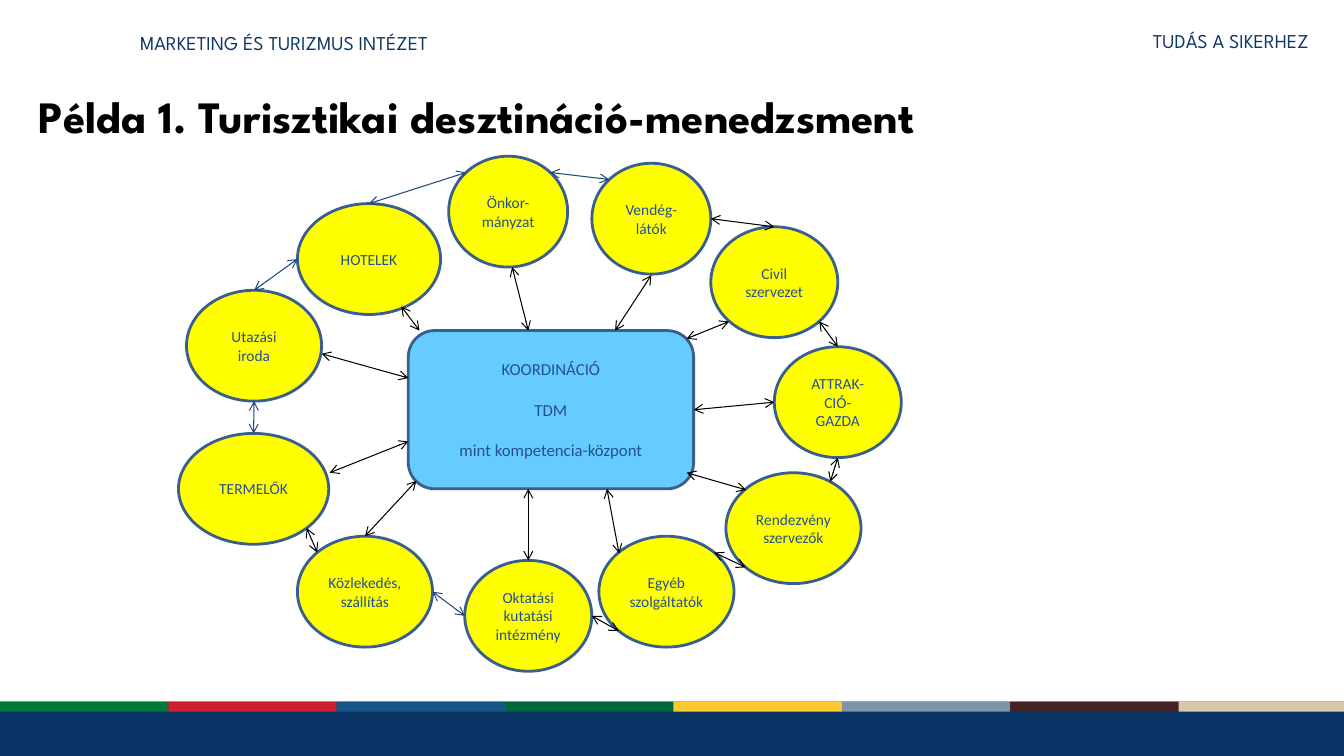
"""Builds a slide with the partners around a tourism destination hub."""
import math

import lxml.etree
import pptx
import pptx.dml.color
import pptx.enum.shapes
import pptx.enum.text
import pptx.oxml.ns
import pptx.util
from pptx.util import Inches

SHAPE = pptx.enum.shapes.MSO_SHAPE
ALIGN = pptx.enum.text.PP_ALIGN
MIDDLE = pptx.enum.text.MSO_ANCHOR.MIDDLE
HEAD = "League Spartan"
BODY = "Calibri"
NAVY, EDGE, INK = "0F3764", "3A5F8C", "23518B"
BLACK, BLUE = "000000", "1F497D"
TALL = 1.1
HUB = (4.05, 3.28, 2.83, 1.57)
STRIPES = ["007934", "CD202C", "165788", "00693C",
           "FDC82F", "7D93AA", "452325", "D9C7AA"]

# text, left, top, width, angle in, angle out, link colour, spoke start, spoke end
NODES = [
    ("Utazási iroda", 1.85, 2.88, 1.34, 270, 90, BLUE, (3.19, 3.51), (4.05, 3.75)),
    ("HOTELEK", 2.95, 2.02, 1.42, 180, 90, BLUE, (3.98, 3.04), (4.16, 3.28)),
    ("Önkor-mányzat", 4.45, 1.55, 1.18, 135, 45, BLUE, (5.08, 2.65), (5.24, 3.28)),
    ("Vendég-látók", 5.87, 1.62, 1.18, 135, 0, BLACK, (6.46, 2.73), (6.1, 3.28)),
    ("Civil szervezet", 7.05, 2.25, 1.26, 90, 315, BLACK, (7.23, 3.19), (6.81, 3.36)),
    ("ATTRAK-CIÓ-GAZDA", 7.68, 3.44, 1.26, 90, 270, BLACK, (7.68, 3.99), None),
    ("Rendezvény\nszervezők", 7.2, 4.69, 1.34, 57, 225, BLACK, (7.4, 4.86), (6.81, 4.69)),
    ("Egyéb szolgáltatók", 5.94, 5.32, 1.34, 45, 225, BLACK, (6.14, 5.49), (6.02, 4.85)),
    ("Oktatási\nkutatási intézmény", 4.61, 5.56, 1.26, 0, 180, BLUE, (5.24, 5.56), (5.24, 4.85)),
    ("Közlekedés, szállítás", 2.95, 5.32, 1.34, 0, 135, BLACK, (3.62, 5.32), (4.13, 4.77)),
    ("TERMELŐK", 1.77, 4.3, 1.49, 315, 90, BLUE, (3.27, 4.69), (4.05, 4.38)),
]


def color(code):
    """Turn a hex string into a colour."""
    return pptx.dml.color.RGBColor.from_string(code)


def write(frame, text, size, face, ink, align, bold=False, gap=0):
    """Fill a text frame, one paragraph a line."""
    frame.word_wrap = True
    frame.text = text
    for i, para in enumerate(frame.paragraphs):
        para.alignment = align
        para.font.size = pptx.util.Pt(size)
        para.font.name = face
        para.font.bold = bold
        para.font.color.rgb = color(ink)
        if i and gap:
            para.space_before = pptx.util.Pt(gap)


def shape(slide, kind, box, fill, edge=None):
    """Add a flat preset shape."""
    item = slide.shapes.add_shape(kind, *map(Inches, box))
    item.shadow.inherit = False
    item.fill.solid()
    item.fill.fore_color.rgb = color(fill)
    if edge:
        item.line.color.rgb = color(edge)
        item.line.width = pptx.util.Pt(2)
    else:
        item.line.fill.background()
    return item


def bubble(slide, kind, box, fill, text, size, gap=0):
    """Add an outlined shape with centred text."""
    item = shape(slide, kind, box, fill, EDGE)
    item.text_frame.vertical_anchor = MIDDLE
    write(item.text_frame, text, size, BODY, INK, ALIGN.CENTER, gap=gap)
    return item


def label(slide, box, text, align):
    """Add a header text."""
    item = slide.shapes.add_textbox(*map(Inches, box))
    write(item.text_frame, text, 14, HEAD, NAVY, align)


def arrow(slide, start, end, ink):
    """Add a thin line with an arrowhead at both ends."""
    line = slide.shapes.add_connector(
        pptx.enum.shapes.MSO_CONNECTOR.STRAIGHT, *map(Inches, start + end))
    line.line.color.rgb = color(ink)
    line.line.width = pptx.util.Pt(0.75)
    for tag in ("a:headEnd", "a:tailEnd"):
        lxml.etree.SubElement(line.line._ln, pptx.oxml.ns.qn(tag), type="arrow")
    lxml.etree.SubElement(line._element.spPr, pptx.oxml.ns.qn("a:effectLst"))
    return line


def rim(node, angle):
    """Give the point on a node's outline at an angle in degrees."""
    left, top, width = node[1:4]
    turn = math.radians(angle)
    return (left + width / 2 * (1 + math.cos(turn)),
            top + TALL / 2 * (1 - math.sin(turn)))


def frame(slide):
    """Add the headers, the title and the footer."""
    shape(slide, SHAPE.RECTANGLE, (0, 6.96, 13.33, 0.54), "083565")
    for i, fill in enumerate(STRIPES):
        shape(slide, SHAPE.RECTANGLE, (i * 1.67, 6.96, 1.67, 0.1), fill)
    label(slide, (1.29, 0.26, 3.45, 0.34), "MARKETING ÉS TURIZMUS INTÉZET", ALIGN.LEFT)
    label(slide, (9.63, 0.24, 3.45, 0.34), "TUDÁS A SIKERHEZ", ALIGN.RIGHT)
    title = slide.shapes.title
    title.left, title.top, title.width, title.height = map(Inches, (0.28, 0.83, 12, 0.64))
    title.text_frame.auto_size = pptx.enum.text.MSO_AUTO_SIZE.NONE
    title.text_frame.vertical_anchor = MIDDLE
    write(title.text_frame, "Példa 1. Turisztikai desztináció-menedzsment",
          32, HEAD, BLACK, ALIGN.LEFT, bold=True)


def chart(slide):
    """Add the hub, the ring of partners and their links."""
    hub = bubble(slide, SHAPE.ROUNDED_RECTANGLE, HUB, "66CCFF",
                 "KOORDINÁCIÓ\nTDM\nmint kompetencia-központ", 12, gap=14.5)
    for text, left, top, width, *_ in NODES:
        bubble(slide, SHAPE.OVAL, (left, top, width, TALL), "FFFF00", text, 11)
    for node, peer in zip(NODES, NODES[1:] + NODES[:1]):
        arrow(slide, rim(node, node[5]), rim(peer, peer[4]), node[6])
        start, end = node[7:]
        spoke = arrow(slide, start, end or start, BLACK)
        if end is None:
            spoke.end_connect(hub, 3)


def main():
    """Build and save the slide."""
    deck = pptx.Presentation()
    deck.slide_width, deck.slide_height = Inches(13.33), Inches(7.5)
    slide = deck.slides.add_slide(deck.slide_layouts[5])
    frame(slide)
    chart(slide)
    deck.save("out.pptx")


if __name__ == "__main__":
    main()
